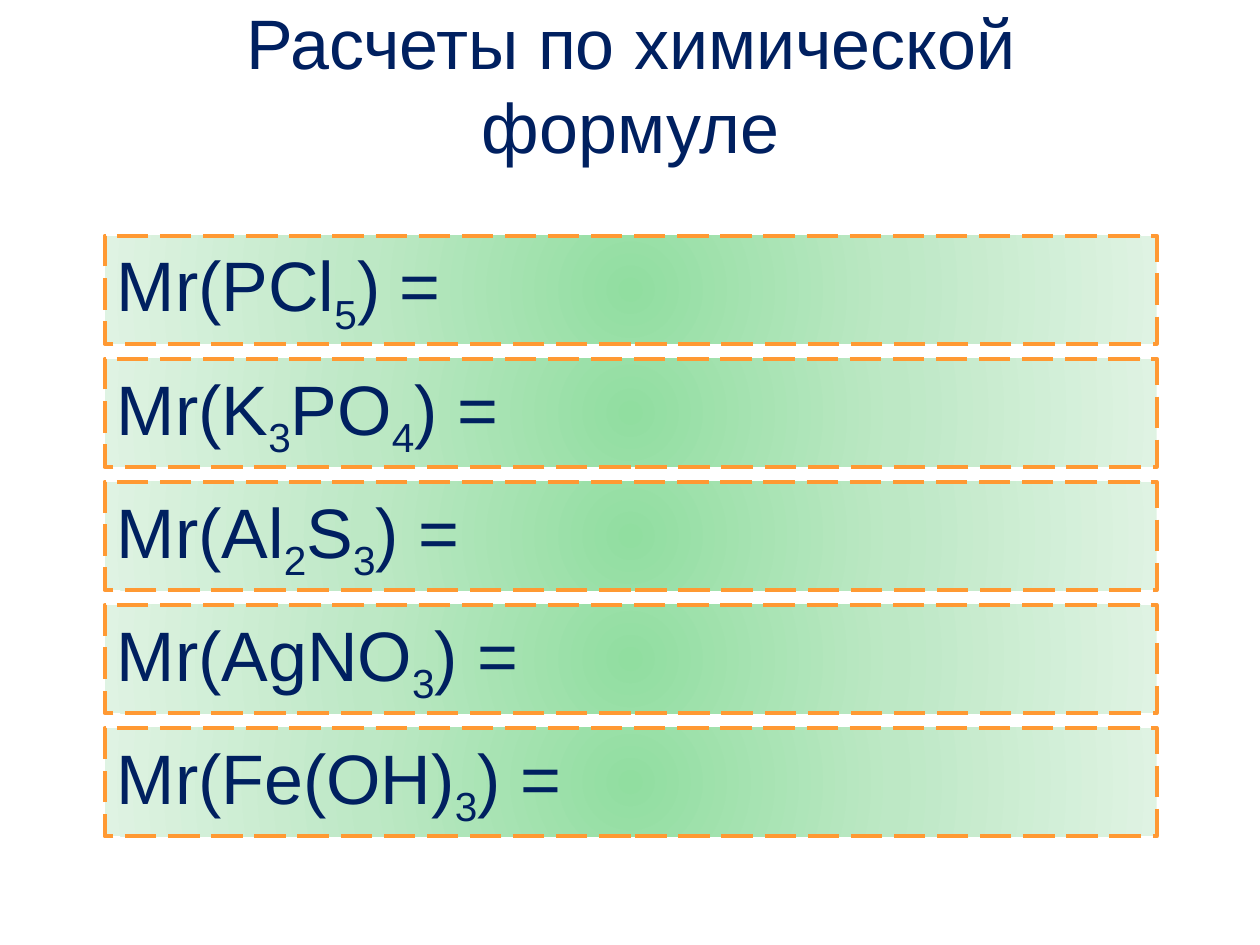
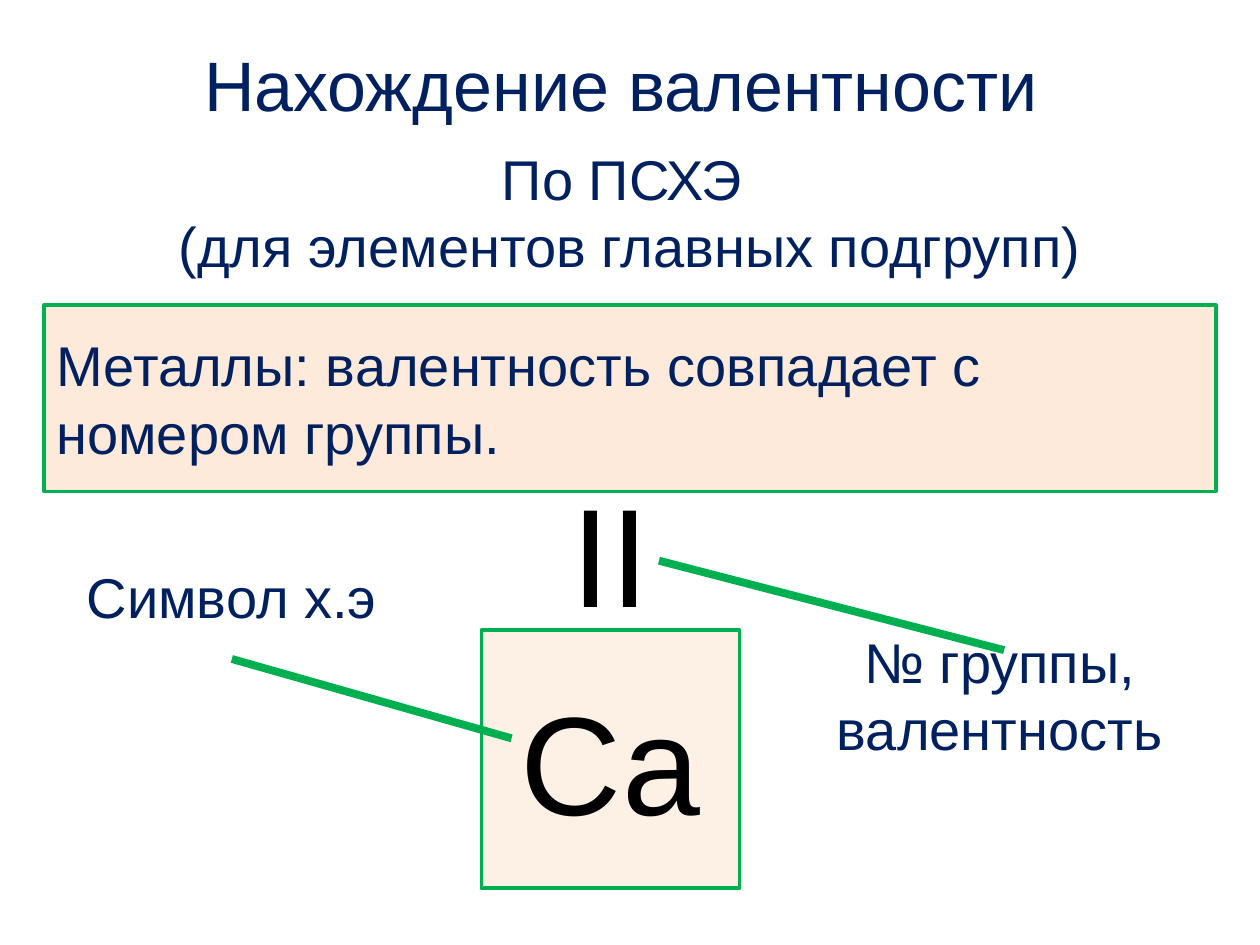
from lxml import etree
from pptx import Presentation
from pptx.dml.color import RGBColor as Rgb
from pptx.enum.dml import MSO_LINE_DASH_STYLE as Dash
from pptx.enum.shapes import MSO_CONNECTOR as Connector, MSO_SHAPE as Shape
from pptx.enum.text import MSO_ANCHOR as Anchor, PP_ALIGN as Align
from pptx.oxml.ns import qn
from pptx.util import Inches, Pt

COLORS = {
    "ink": "002060", "black": "000000", "green": "00B050",
    "orange": "FF9933", "peach": "FDEADA",
    "glow_core": "91DEA0", "glow_mid": "BDE8C5", "glow_edge": "DFF3E3",
}
GLOW = ("glow_core", "glow_mid", "glow_edge")
COLS, ROWS = 100, 75
FONT = "Arial"
TITLE_SIZE, BODY_SIZE, SYMBOL_SIZE = 40, 32, 80


class Deck:
    """Shared style, the grid and the slide being filled."""

    def __init__(self):
        self.prs = Presentation()
        self.prs.slide_width, self.prs.slide_height = Inches(10), Inches(7.5)
        self.slide = None

    def grid(self, *cells):
        """Turn alternating columns and rows into slide lengths."""
        units = (self.prs.slide_width / COLS, self.prs.slide_height / ROWS)
        return [round(cell * units[i % 2]) for i, cell in enumerate(cells)]

    def new_slide(self, title):
        self.slide = self.prs.slides.add_slide(self.prs.slide_layouts[6])
        self.text((9.8, 2.3, 80.5, 8.6), [[title]], TITLE_SIZE)

    def put_text(self, shape, paragraphs, size, color, align):
        """Each paragraph is a list of runs; integer runs are subscripts."""
        frame = shape.text_frame
        frame.word_wrap = True
        frame.vertical_anchor = Anchor.MIDDLE
        for i, runs in enumerate(paragraphs):
            paragraph = frame.add_paragraph() if i else frame.paragraphs[0]
            paragraph.alignment = align
            for part in runs:
                run = paragraph.add_run()
                run.text = str(part)
                run.font.name, run.font.size = FONT, Pt(size)
                run.font.color.rgb = Rgb.from_string(COLORS[color])
                if isinstance(part, int):
                    run.font._element.set("baseline", "-25000")

    def text(self, cells, paragraphs, size=BODY_SIZE, color="ink"):
        box = self.slide.shapes.add_textbox(*self.grid(*cells))
        self.put_text(box, paragraphs, size, color, Align.CENTER)

    def box(self, cells, runs, size=BODY_SIZE, color="ink", align=Align.LEFT,
            line="green", width=2, dash=None, opacity=None, glow=False):
        shape = self.slide.shapes.add_shape(Shape.RECTANGLE, *self.grid(*cells))
        shape.shadow.inherit = False
        shape.fill.solid()
        shape.fill.fore_color.rgb = Rgb.from_string(COLORS["peach"])
        self.outline(shape.line, line, width)
        if dash:
            shape.line.dash_style = dash
        solid = shape._element.spPr.find(qn("a:solidFill"))
        if opacity:
            etree.SubElement(solid[0], qn("a:alpha"), val=str(opacity * 1000))
        if glow:
            solid.getparent().replace(solid, self.radial_fill())
        self.put_text(shape, [runs], size, color, align)

    def radial_fill(self):
        fill = etree.Element(qn("a:gradFill"), rotWithShape="1")
        stops = etree.SubElement(fill, qn("a:gsLst"))
        for i, name in enumerate(GLOW):
            stop = etree.SubElement(stops, qn("a:gs"), pos=str(i * 50000))
            etree.SubElement(stop, qn("a:srgbClr"), val=COLORS[name])
        circle = etree.SubElement(fill, qn("a:path"), {"path": "circle"})
        etree.SubElement(circle, qn("a:fillToRect"),
                         {side: "50000" for side in "ltrb"})
        return fill

    def outline(self, line, color, width):
        line.color.rgb = Rgb.from_string(COLORS[color])
        line.width = Pt(width)

    def pointer(self, *ends):
        link = self.slide.shapes.add_connector(Connector.STRAIGHT,
                                               *self.grid(*ends))
        self.outline(link.line, "green", 4.5)
        etree.SubElement(link._element.spPr, qn("a:effectLst"))


def formula_slide(deck):
    deck.new_slide("Расчеты по химической формуле")
    formulas = [
        ["Mr(PCl", 5, ") ="],
        ["Mr(K", 3, "PO", 4, ") ="],
        ["Mr(Al", 2, "S", 3, ") ="],
        ["Mr(AgNO", 3, ") ="],
        ["Mr(Fe(OH)", 3, ") ="],
    ]
    top, pitch = 18.7, 9.77
    for i, formula in enumerate(formulas):
        deck.box((8.3, top + i * pitch, 83.5, 8.6), formula, TITLE_SIZE,
                 line="orange", width=2.25, dash=Dash.LONG_DASH, glow=True)


def valence_slide(deck):
    deck.new_slide("Нахождение валентности ")
    deck.text((8.1, 11.7, 83.8, 10.2),
              [["По ПСХЭ "], ["(для элементов главных подгрупп)"]])
    deck.box((3.5, 24.2, 93, 14.8),
             ["Металлы: валентность совпадает с номером группы."])

    # Element cell with its group number above
    cell_left, cell_top, cell_side = 38.2, 50, 20.5
    deck.box((cell_left, cell_top, cell_side, cell_side), ["Ca"], SYMBOL_SIZE,
             "black", Align.CENTER, opacity=69)
    deck.text((cell_left, cell_top - 12.5, cell_side, 12.5), [["II"]],
              SYMBOL_SIZE, "black")

    # Captions and their pointers
    deck.pointer(52.3, 44.5, 79.7, 51.6)
    deck.text((60.2, 50, 38.3, 10.2), [["№ группы, валентность"]])
    deck.text((1.6, 42.2, 33.6, 10.2), [["Символ х.э"]])
    deck.pointer(18.4, 52.3, 40.6, 58.6)


def main():
    deck = Deck()
    formula_slide(deck)
    valence_slide(deck)
    deck.prs.save("out.pptx")


if __name__ == "__main__":
    main()
